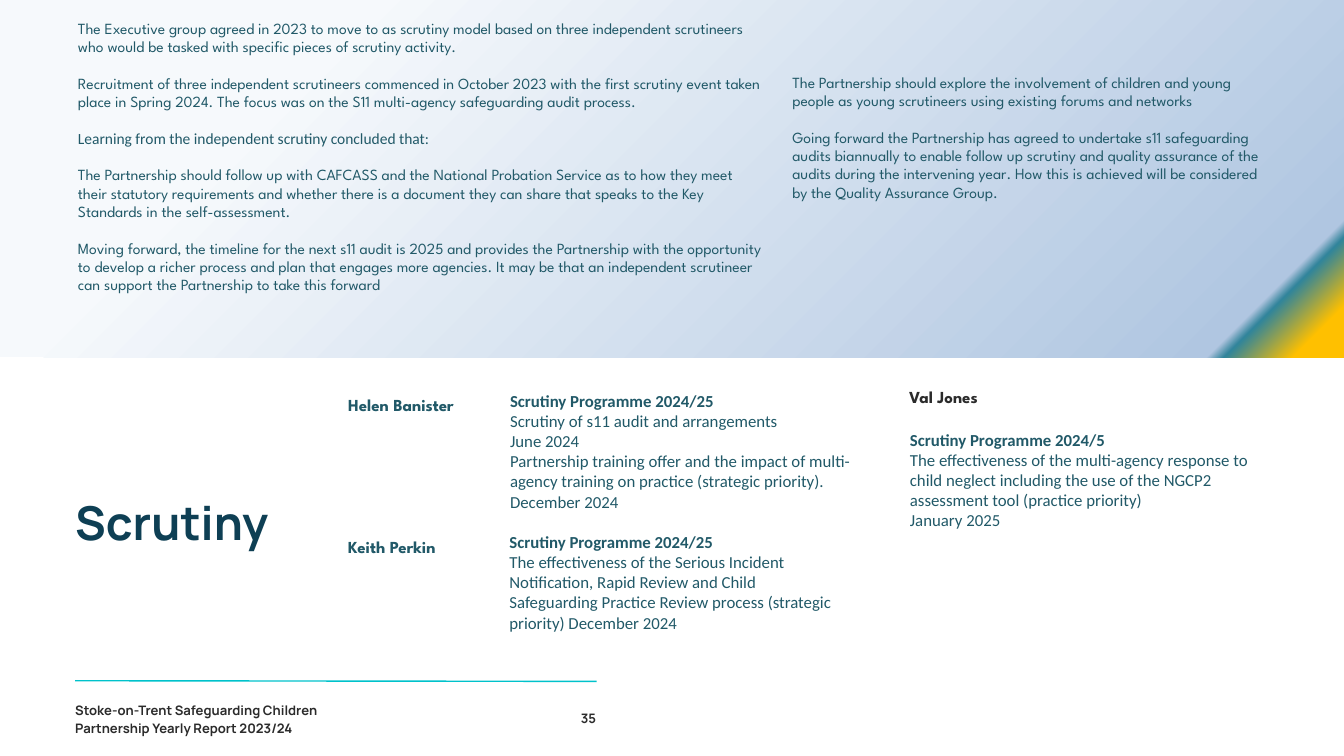
from dataclasses import dataclass

from lxml import etree
from pptx import Presentation
from pptx.dml.color import RGBColor
from pptx.enum.shapes import MSO_CONNECTOR, MSO_SHAPE
from pptx.enum.text import MSO_AUTO_SIZE, PP_ALIGN
from pptx.oxml import parse_xml
from pptx.oxml.ns import nsdecls, qn
from pptx.util import Inches, Pt

RECTANGLE = MSO_SHAPE.RECTANGLE
STRAIGHT = MSO_CONNECTOR.STRAIGHT
FIT_SHAPE = MSO_AUTO_SIZE.SHAPE_TO_FIT_TEXT
LEFT, RIGHT = PP_ALIGN.LEFT, PP_ALIGN.RIGHT

COLOURS = {
    "teal": "215968", "navy": "0E3F54", "ink": "2B2B2B", "rule": "00C2CB",
    "gold": "FFC000", "sea": "31859C", "sky": "B0C6E1", "mist": "F6F9FC",
}
BANNER_STOPS = [(3, "gold"), (7, "sea"), (8, "sky"), (78, "mist")]
HEADING, BODY, NAME = "Manrope", "Calibri", "League Spartan"
LINE_PITCH = 19.6
NAME_PITCH = 25.2


@dataclass
class Box:
    left: float
    top: float
    width: float
    height: float


@dataclass
class Scrutineer:
    name: str
    name_box: Box
    name_colour: str
    programme: str
    programme_box: Box
    heading_pitch: float | None
    details: list[str]


SCRUTINEERS = [
    Scrutineer(
        "Helen Banister", Box(5.18, 5.83, 2.55, 0.34), "teal",
        "Scrutiny Programme 2024/25", Box(7.59, 5.84, 5.41, 1.8), LINE_PITCH,
        ["Scrutiny of s11 audit and arrangements", "June 2024",
         "Partnership training offer and the impact of multi-agency training "
         "on practice (strategic priority).", "December 2024"]),
    Scrutineer(
        "Keith Perkin", Box(5.18, 7.93, 2.77, 0.34), "teal",
        "Scrutiny Programme 2024/25", Box(7.58, 7.94, 4.82, 1.49), LINE_PITCH,
        ["The effectiveness of the Serious Incident Notification, Rapid Review and "
         "Child Safeguarding Practice Review process (strategic priority) December 2024"]),
    Scrutineer(
        "Val Jones", Box(13.53, 5.7, 2.98, 0.33), "ink",
        "Scrutiny Programme 2024/5", Box(13.54, 6.39, 5.11, 1.52), None,
        ["The effectiveness of the multi-agency response to child neglect "
         "including the use of the NGCP2",
         "assessment tool (practice priority)", "January 2025"]),
]

LEARNING = "Learning from the independent scrutiny concluded that:"
BANNER_COLUMNS = [
    (Box(1.16, 0.29, 10.18, 4.76), [
        "The Executive group agreed in 2023 to move to as scrutiny model based on three "
        "independent scrutineers who would be tasked with specific pieces of scrutiny activity.",
        "Recruitment of three independent scrutineers commenced in October 2023 with the first "
        "scrutiny event taken place in Spring 2024. The focus was on the S11 multi-agency "
        "safeguarding audit process.",
        LEARNING,
        "The Partnership should follow up with CAFCASS and the National Probation Service as to "
        "how they meet their statutory requirements and whether there is a document they can "
        "share that speaks to the Key Standards in the self-assessment.",
        "Moving forward, the timeline for the next s11 audit is 2025 and provides the "
        "Partnership with the opportunity to develop a richer process and plan that engages "
        "more agencies. It may be that an independent scrutineer can support the Partnership "
        "to take this forward",
    ]),
    (Box(11.79, 1.09, 7.09, 2.24), [
        "The Partnership should explore the involvement of children and young people as young "
        "scrutineers using existing forums and networks",
        "Going forward the Partnership has agreed to undertake s11 safeguarding audits "
        "biannually to enable follow up scrutiny and quality assurance of the audits during the "
        "intervening year. How this is achieved will be considered by the Quality Assurance Group.",
    ]),
]


def add_text_frame(slide, box: Box):
    shape = slide.shapes.add_textbox(
        Inches(box.left), Inches(box.top), Inches(box.width), Inches(box.height))
    frame = shape.text_frame
    frame.word_wrap = True
    frame.auto_size = FIT_SHAPE
    frame.margin_left = frame.margin_top = frame.margin_right = frame.margin_bottom = 0
    return frame


def write(frame, text: str, *, font: str, size: float, colour: str = "teal",
          bold: bool = False, pitch: float | None = None, gap: float = 0,
          align=LEFT) -> None:
    """Add a paragraph, using the frame's first one while it is empty.

    The gap is left out before the first paragraph.
    """
    paragraph = frame.paragraphs[0]
    if paragraph.runs:
        paragraph = frame.add_paragraph()
        paragraph.space_before = Pt(gap)
    paragraph.alignment = align
    if pitch:
        paragraph.line_spacing = Pt(pitch)
    run = paragraph.add_run()
    run.text = text
    run.font.name = font
    run.font.size = Pt(size)
    run.font.bold = bold
    run.font.color.rgb = RGBColor.from_string(COLOURS[colour])


def add_banner(slide) -> None:
    """Draw the top band, its gradient spreading from the bottom right corner."""
    banner = slide.shapes.add_shape(
        RECTANGLE, Inches(0), Inches(-0.14), Inches(20), Inches(5.46))
    banner.shadow.inherit = False
    banner.line.fill.background()
    banner.fill.gradient()
    stops = "".join(
        f'<a:gs pos="{position * 1000}"><a:srgbClr val="{COLOURS[colour]}"/></a:gs>'
        for position, colour in BANNER_STOPS)
    gradient = parse_xml(
        f'<a:gradFill {nsdecls("a")} rotWithShape="1"><a:gsLst>{stops}</a:gsLst>'
        '<a:path path="circle"><a:fillToRect l="100000" t="100000"/></a:path>'
        '<a:tileRect r="-100000" b="-100000"/></a:gradFill>')
    properties = banner.element.spPr
    properties.replace(properties.find(qn("a:gradFill")), gradient)


def add_footer(slide) -> None:
    rule = slide.shapes.add_connector(
        STRAIGHT, Inches(1.12), Inches(10.13), Inches(8.88), Inches(10.14))
    rule.line.color.rgb = RGBColor.from_string(COLOURS["rule"])
    rule.line.width = Pt(1.5)
    etree.SubElement(rule.element.spPr, qn("a:effectLst"))
    for text, box, align in [
        ("Stoke-on-Trent Safeguarding Children Partnership Yearly Report 2023/24",
         Box(1.12, 10.41, 4.44, 0.83), LEFT),
        ("35", Box(7.45, 10.53, 1.42, 0.27), RIGHT),
    ]:
        write(add_text_frame(slide, box), text, font=HEADING, size=14, colour="ink",
              bold=True, pitch=LINE_PITCH, align=align)


def add_scrutineer(slide, person: Scrutineer) -> None:
    write(add_text_frame(slide, person.name_box), person.name, font=NAME, size=18,
          colour=person.name_colour, bold=True, pitch=NAME_PITCH)
    frame = add_text_frame(slide, person.programme_box)
    write(frame, person.programme, font=BODY, size=18, bold=True,
          pitch=person.heading_pitch)
    for detail in person.details:
        write(frame, detail, font=BODY, size=18)


def main() -> None:
    presentation = Presentation()
    presentation.slide_width = Inches(20)
    presentation.slide_height = Inches(11.25)
    slide = presentation.slides.add_slide(presentation.slide_layouts[6])

    add_banner(slide)
    for box, paragraphs in BANNER_COLUMNS:
        frame = add_text_frame(slide, box)
        for text in paragraphs:
            write(frame, text, font=BODY if text == LEARNING else NAME, size=16.6,
                  pitch=LINE_PITCH, gap=LINE_PITCH)

    write(add_text_frame(slide, Box(1.12, 7.21, 10.66, 0.93)), "Scrutiny",
          font=HEADING, size=50, colour="navy", bold=True, pitch=70)
    for person in SCRUTINEERS:
        add_scrutineer(slide, person)
    add_footer(slide)
    presentation.save("out.pptx")


if __name__ == "__main__":
    main()
